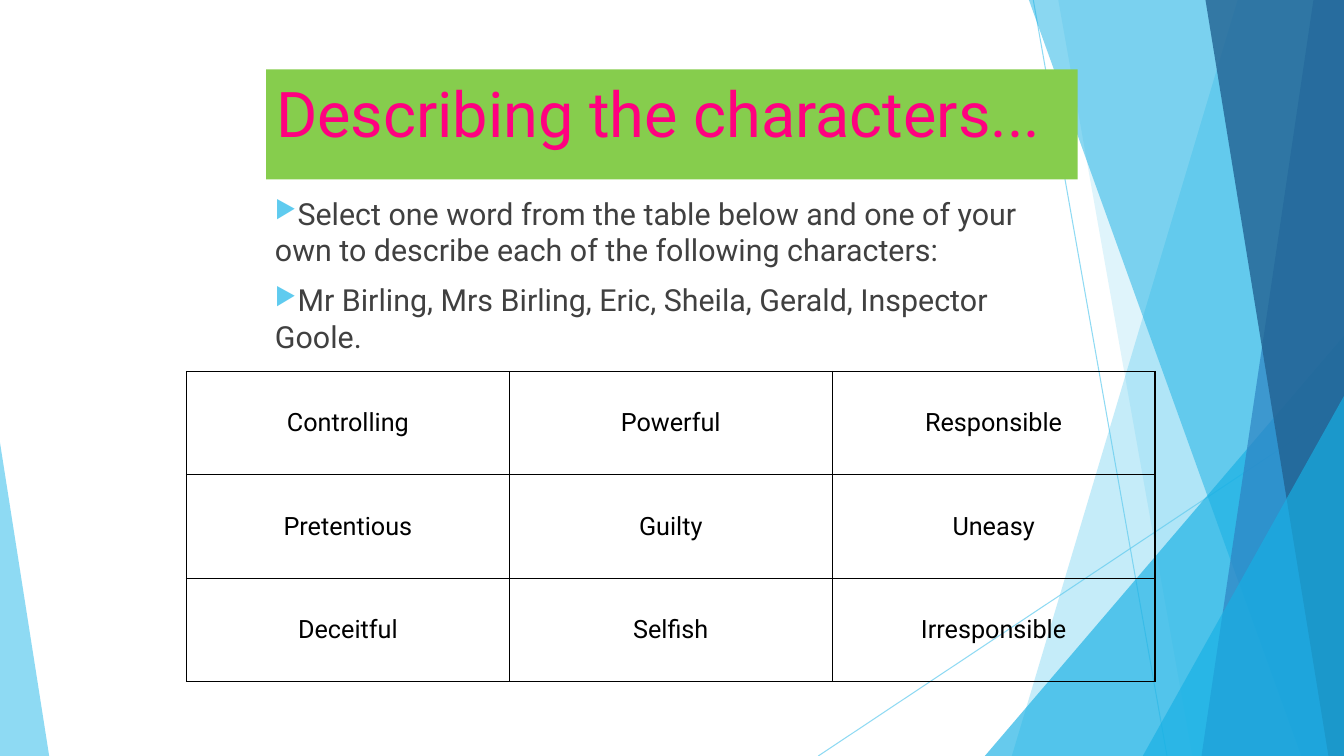
from lxml import etree
from pptx import Presentation
from pptx.dml.color import RGBColor
from pptx.enum.shapes import MSO_CONNECTOR, MSO_SHAPE
from pptx.enum.text import MSO_ANCHOR, PP_ALIGN
from pptx.oxml.ns import qn
from pptx.util import Cm, Pt

STRAIGHT = MSO_CONNECTOR.STRAIGHT
RECT = MSO_SHAPE.RECTANGLE
TRIANGLE = MSO_SHAPE.ISOSCELES_TRIANGLE
TOP, MIDDLE = MSO_ANCHOR.TOP, MSO_ANCHOR.MIDDLE
LEFT, CENTER = PP_ALIGN.LEFT, PP_ALIGN.CENTER

FONT = "Roboto"
WIDTH, HEIGHT = 33.87, 19.05
COLORS = {
    "sky": "5FCBEF", "cyan": "17B0E4", "blue": "2E83C3", "navy": "226292",
    "green": "86CD4D", "pink": "FF0080", "text": "404040", "black": "000000",
}
TITLE = "Describing the characters..."
TASKS = [
    "Select one word from the table below and one of your own to describe "
    "each of the following characters:",
    "Mr Birling, Mrs Birling, Eric, Sheila, Gerald, Inspector Goole.",
]
WORDS = [
    ["Controlling", "Powerful", "Responsible"],
    ["Pretentious", "Guilty", "Uneasy"],
    ["Deceitful", "Selfish", "Irresponsible"],
]


def rgb(name):
    return RGBColor.from_string(COLORS[name])


def set_alpha(sp, percent):
    color = next(sp._element.spPr.iter(qn("a:srgbClr")))
    etree.SubElement(color, qn("a:alpha"), val=str(percent * 1000))


def paint(sp, color):
    sp.shadow.inherit = False
    sp.fill.solid()
    sp.fill.fore_color.rgb = rgb(color)
    sp.line.fill.background()


def add_run(p, text, size, color):
    r = p.add_run()
    r.text = text
    r.font.name = FONT
    r.font.size = Pt(size)
    r.font.color.rgb = rgb(color)


def add_ray(s, x1, y1, x2, y2):
    line = s.shapes.add_connector(STRAIGHT, Cm(x1), Cm(y1), Cm(x2), Cm(y2))
    line.line.color.rgb = rgb("sky")
    line.line.width = Pt(0.75)
    set_alpha(line, 70)
    etree.SubElement(line._element.spPr, qn("a:effectLst"))


def add_band(s, x_top, x_bottom, color, alpha):
    fb = s.shapes.build_freeform(Cm(x_top), 0)
    fb.add_line_segments([(Cm(WIDTH), 0), (Cm(WIDTH), Cm(HEIGHT)),
                          (Cm(x_bottom), Cm(HEIGHT))])
    sp = fb.convert_to_shape()
    paint(sp, color)
    set_alpha(sp, alpha)


def add_corner(s, x, y, w, apex, color, alpha):
    sp = s.shapes.add_shape(TRIANGLE, Cm(x), Cm(y), Cm(w), Cm(HEIGHT - y))
    sp.adjustments[0] = apex
    paint(sp, color)
    set_alpha(sp, alpha)


def add_backdrop(s):
    add_ray(s, 26.04, 0, 29.41, HEIGHT)
    add_ray(s, WIDTH, 10.24, 20.62, HEIGHT)
    add_band(s, 31.19, 25.5, "sky", 36)
    add_band(s, 26.67, 30.05, "sky", 20)
    add_corner(s, 24.82, 8.46, 9.05, 1, "cyan", 66)
    add_band(s, 25.93, 32.79, "cyan", 50)
    add_band(s, 33.1, 30.28, "blue", 70)
    add_band(s, 30.38, 33.48, "navy", 80)
    add_corner(s, 28.8, 9.98, 5.07, 1, "cyan", 66)
    add_corner(s, 0, 11.15, 1.24, 0, "sky", 70)


def add_title(s, x, y, w, h):
    sp = s.shapes.add_shape(RECT, Cm(x), Cm(y), Cm(w), Cm(h))
    paint(sp, "green")
    tf = sp.text_frame
    tf.word_wrap = True
    tf.vertical_anchor = TOP
    p = tf.paragraphs[0]
    p.alignment = LEFT
    add_run(p, TITLE, 45, "pink")


def add_bullet(p):
    pPr = p._p.get_or_add_pPr()
    pPr.set("marL", "0")
    pPr.set("indent", "0")
    color = etree.SubElement(pPr, qn("a:buClr"))
    etree.SubElement(color, qn("a:srgbClr"), val=COLORS["sky"])
    etree.SubElement(pPr, qn("a:buSzPct"), val="80000")
    etree.SubElement(pPr, qn("a:buChar"), char="▶")


def add_tasks(s, x, y, w, h):
    tf = s.shapes.add_textbox(Cm(x), Cm(y), Cm(w), Cm(h)).text_frame
    tf.word_wrap = True
    for i, task in enumerate(TASKS):
        p = tf.add_paragraph() if i else tf.paragraphs[0]
        p.space_before = Pt(10)
        add_bullet(p)
        add_run(p, task, 21.7, "text")


def add_borders(cell):
    tcPr = cell._tc.get_or_add_tcPr()
    for side in ("lnL", "lnR", "lnT", "lnB"):
        ln = etree.SubElement(tcPr, qn(f"a:{side}"), w=str(Pt(1)))
        fill = etree.SubElement(ln, qn("a:solidFill"))
        etree.SubElement(fill, qn("a:srgbClr"), val=COLORS["black"])


def add_words(s, x, y, w, h):
    table = s.shapes.add_table(len(WORDS), len(WORDS[0]),
                               Cm(x), Cm(y), Cm(w), Cm(h)).table
    table.first_row = False
    table.horz_banding = False
    for i, row in enumerate(WORDS):
        for j, word in enumerate(row):
            cell = table.cell(i, j)
            add_borders(cell)
            cell.fill.background()
            cell.vertical_anchor = MIDDLE
            cell.margin_left = cell.margin_right = Cm(0.13)
            cell.margin_top = cell.margin_bottom = Cm(0.13)
            p = cell.text_frame.paragraphs[0]
            p.alignment = CENTER
            add_run(p, word, 18, "black")


def main():
    prs = Presentation()
    prs.slide_width, prs.slide_height = Cm(WIDTH), Cm(HEIGHT)
    s = prs.slides.add_slide(prs.slide_layouts[6])
    add_backdrop(s)
    add_title(s, 6.71, 1.75, 20.45, 2.77)
    add_tasks(s, 6.68, 4.78, 20.45, 4.37)
    add_words(s, 4.7, 9.36, 24.41, 7.82)
    prs.save("out.pptx")


if __name__ == "__main__":
    main()
